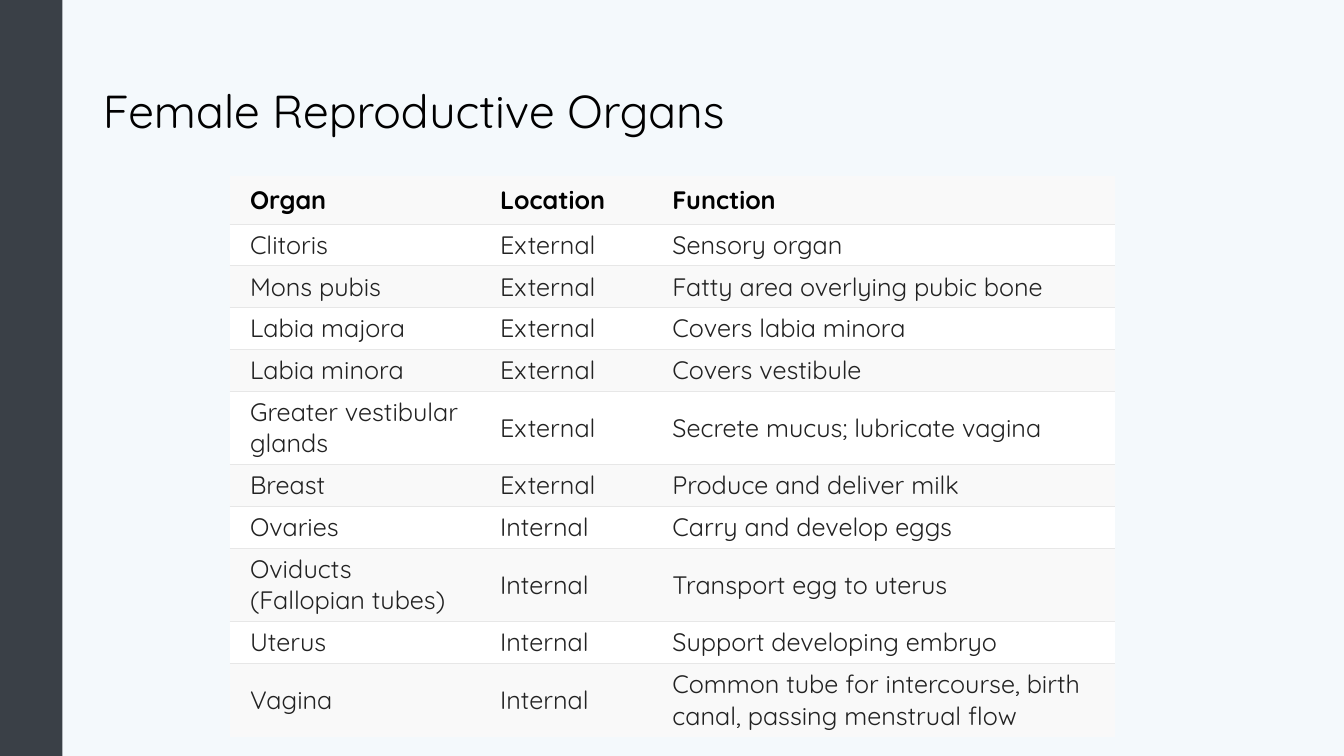
"""Build a slide with a table of female reproductive organs."""
from lxml.etree import SubElement
from pptx import Presentation
from pptx.dml.color import RGBColor
from pptx.enum.shapes import MSO_SHAPE
from pptx.enum.text import MSO_ANCHOR, PP_ALIGN
from pptx.oxml.ns import qn
from pptx.util import Inches, Pt

COLORS = {
    "background": "F4F9FC",
    "bar": "3A4047",
    "heading": "000000",
    "body": "222222",
    "band": "F9F9F9",
    "plain": "FFFFFF",
    "rule": "E7E7E7",
}
ROWS = [
    ("Organ", "Location", "Function"),
    ("Clitoris", "External", "Sensory organ"),
    ("Mons pubis", "External", "Fatty area overlying pubic bone"),
    ("Labia majora", "External", "Covers labia minora"),
    ("Labia minora", "External", "Covers vestibule"),
    ("Greater vestibular glands", "External", "Secrete mucus; lubricate vagina"),
    ("Breast", "External", "Produce and deliver milk"),
    ("Ovaries", "Internal", "Carry and develop eggs"),
    ("Oviducts (Fallopian tubes)", "Internal", "Transport egg to uterus"),
    ("Uterus", "Internal", "Support developing embryo"),
    ("Vagina", "Internal",
     "Common tube for intercourse, birth canal, passing menstrual flow"),
]
COL_WIDTHS = [2.48, 1.71, 4.59]
HEADER_H, SINGLE_H, DOUBLE_H = 0.46, 0.41, 0.73
TWO_LINE_ROWS = {5, 8, 10}
LAST = len(ROWS) - 1


def format_run(r, size, color, bold=False):
    for name, value in {"name": "Quicksand", "size": Pt(size), "bold": bold}.items():
        setattr(r.font, name, value)
    r.font.color.rgb = RGBColor.from_string(COLORS[color])


def set_border(cell, index, tag, visible):
    ln = cell._tc.get_or_add_tcPr().makeelement(qn(tag), {"w": str(Pt(0.75))})
    if visible:
        fill = SubElement(ln, qn("a:solidFill"))
        SubElement(fill, qn("a:srgbClr"), val=COLORS["rule"])
    else:
        SubElement(ln, qn("a:noFill"))
    cell._tc.tcPr.insert(index, ln)


prs = Presentation()
prs.slide_width, prs.slide_height = Inches(13.33), Inches(7.5)
s = prs.slides.add_slide(prs.slide_layouts[5])
s.background.fill.solid()
s.background.fill.fore_color.rgb = RGBColor.from_string(COLORS["background"])

bar = s.shapes.add_shape(MSO_SHAPE.RECTANGLE, 0, 0, Inches(0.62), prs.slide_height)
bar.shadow.inherit = False
bar.fill.solid()
bar.fill.fore_color.rgb = RGBColor.from_string(COLORS["bar"])
bar.line.fill.background()

title = s.shapes.title
title.left, title.top = Inches(0.92), Inches(0.4)
title.width, title.height = Inches(11.5), Inches(1.45)
tf = title.text_frame
tf.word_wrap = True
tf.vertical_anchor = MSO_ANCHOR.MIDDLE
p = tf.paragraphs[0]
p.alignment = PP_ALIGN.LEFT
p.line_spacing = 0.9
r = p.add_run()
r.text = "Female Reproductive Organs"
format_run(r, 33, "heading")

heights = [HEADER_H] + [
    DOUBLE_H if i in TWO_LINE_ROWS else SINGLE_H for i in range(1, len(ROWS))
]
table = s.shapes.add_table(
    len(ROWS), len(COL_WIDTHS), Inches(2.28), Inches(1.75),
    Inches(sum(COL_WIDTHS)), Inches(sum(heights))).table
for column, width in zip(table.columns, COL_WIDTHS):
    column.width = Inches(width)

for i, (texts, height) in enumerate(zip(ROWS, heights)):
    table.rows[i].height = Inches(height)
    header = i == 0
    margin = Inches(0.08 if header else 0.05)
    cell_format = {
        "vertical_anchor": MSO_ANCHOR.MIDDLE,
        "margin_left": Inches(0.2),
        "margin_right": Inches(0.2),
        "margin_top": margin,
        "margin_bottom": margin,
    }
    borders = {"a:lnL": False, "a:lnR": False, "a:lnT": i > 0, "a:lnB": i < LAST}
    for j, text in enumerate(texts):
        cell = table.cell(i, j)
        for name, value in cell_format.items():
            setattr(cell, name, value)
        cell.fill.solid()
        fill = "plain" if i % 2 else "band"
        cell.fill.fore_color.rgb = RGBColor.from_string(COLORS[fill])
        for index, (tag, visible) in enumerate(borders.items()):
            set_border(cell, index, tag, visible)
        r = cell.text_frame.paragraphs[0].add_run()
        r.text = text
        format_run(r, 18, "heading" if header else "body", header)

prs.save("out.pptx")
